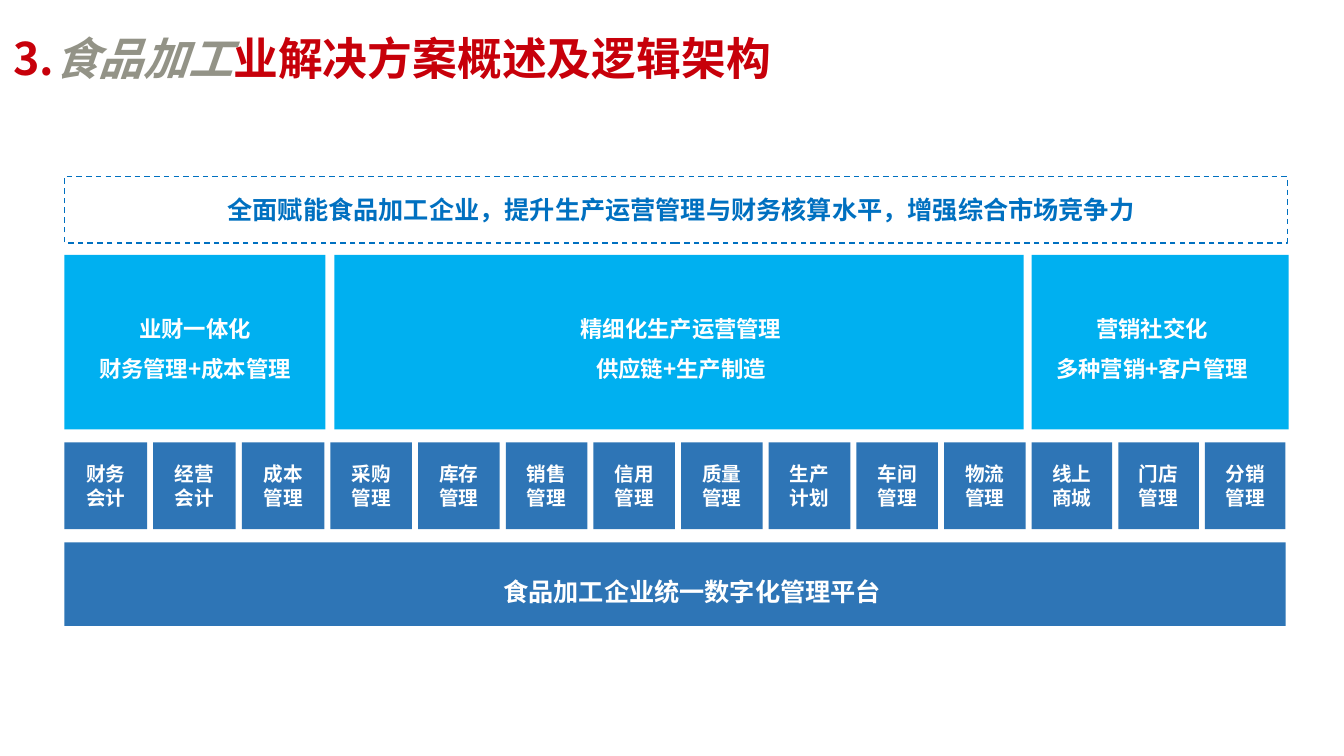
"""Builds the food processing solution architecture slide."""
from lxml.etree import SubElement
from pptx import Presentation
from pptx.dml.color import RGBColor
from pptx.enum.dml import MSO_LINE
from pptx.enum.shapes import MSO_SHAPE
from pptx.enum.text import MSO_ANCHOR, PP_ALIGN
from pptx.oxml.ns import qn
from pptx.util import Inches, Pt

FACE = "Noto Sans CJK SC"
RED = RGBColor(0xC7, 0x00, 0x0A)
GREY = RGBColor(0x93, 0x93, 0x87)
WHITE = RGBColor(0xFF, 0xFF, 0xFF)
BLUE = RGBColor(0x00, 0x70, 0xC0)
SKY = RGBColor(0x00, 0xB0, 0xF0)
NAVY = RGBColor(0x2E, 0x75, 0xB6)

deck = Presentation()
deck.slide_width, deck.slide_height = Inches(13.34), Inches(7.5)
slide = deck.slides.add_slide(deck.slide_layouts[6])
UNIT = deck.slide_width // 1334
LEFT, GAP = 64, 6


def write(para, text, color, size, italic=False):
    run = para.add_run()
    run.text = text
    style = {"name": FACE, "size": Pt(size), "bold": True, "italic": italic}
    for key, value in style.items():
        setattr(run.font, key, value)
    run.font.color.rgb = color
    SubElement(run.font._element, qn("a:ea")).set("typeface", FACE)


def block(area, lines, fill, size, space=1.0, shift=0):
    shape = slide.shapes.add_shape(
        MSO_SHAPE.RECTANGLE, *[n * UNIT for n in area])
    shape.shadow.inherit = False
    if fill is None:
        shape.fill.background()
        shape.line.color.rgb = BLUE
        shape.line.width = Pt(1)
        shape.line.dash_style = MSO_LINE.DASH
    else:
        shape.fill.solid()
        shape.fill.fore_color.rgb = fill
        shape.line.fill.background()
    frame = shape.text_frame
    format = {"word_wrap": True, "vertical_anchor": MSO_ANCHOR.MIDDLE,
              "margin_left": max(shift, 0) * 2 * UNIT,
              "margin_right": max(-shift, 0) * 2 * UNIT,
              "margin_top": 0, "margin_bottom": 0}
    for key, value in format.items():
        setattr(frame, key, value)
    for i, line in enumerate(lines):
        para = frame.add_paragraph() if i else frame.paragraphs[0]
        para.alignment = PP_ALIGN.CENTER
        para.line_spacing = space
        write(para, line, BLUE if fill is None else WHITE, size)


title = slide.shapes.add_textbox(*[n * UNIT for n in (13, 30, 1204, 59)])
frame = title.text_frame
layout = {"word_wrap": True, "vertical_anchor": MSO_ANCHOR.MIDDLE,
          "margin_left": 0, "margin_right": 0,
          "margin_top": 0, "margin_bottom": 0}
for key, value in layout.items():
    setattr(frame, key, value)
head = frame.paragraphs[0]
head.line_spacing = Pt(34.3)
write(head, "3.", RED, 32)
write(head, "食品加工", GREY, 32, True)
write(head, "业解决方案概述及逻辑架构", RED, 32)

block((LEFT, 175, 1214, 66),
      ["全面赋能食品加工企业，提升生产运营管理与财务核算水平，增强综合市场竞争力"],
      None, 18, shift=5)

groups = [
    (64, 259, 0, ["业财一体化", "财务管理+成本管理"],
     64, 88, "财务会计 经营会计 成本管理"),
    (332, 684, 2, ["精细化生产运营管理", "供应链+生产制造"],
     328, 87, "采购管理 库存管理 销售管理 信用管理 质量管理 生产计划 车间管理 物流管理"),
    (1024, 255, -8, ["营销社交化", "多种营销+客户管理"],
     1024, 86, "线上商城 门店管理 分销管理"),
]
for left, wide, shift, lines, start, pitch, names in groups:
    block((left, 253, wide, 173), lines, SKY, 16, 1.5, shift)
    for i, name in enumerate(names.split()):
        block((start + i * pitch, 439, pitch - GAP, 86),
              [name[:2], name[2:]], NAVY, 14)

block((LEFT, 538, 1212, 83), ["食品加工企业统一数字化管理平台"],
      NAVY, 18, 1.5, 17)

deck.save("out.pptx")
